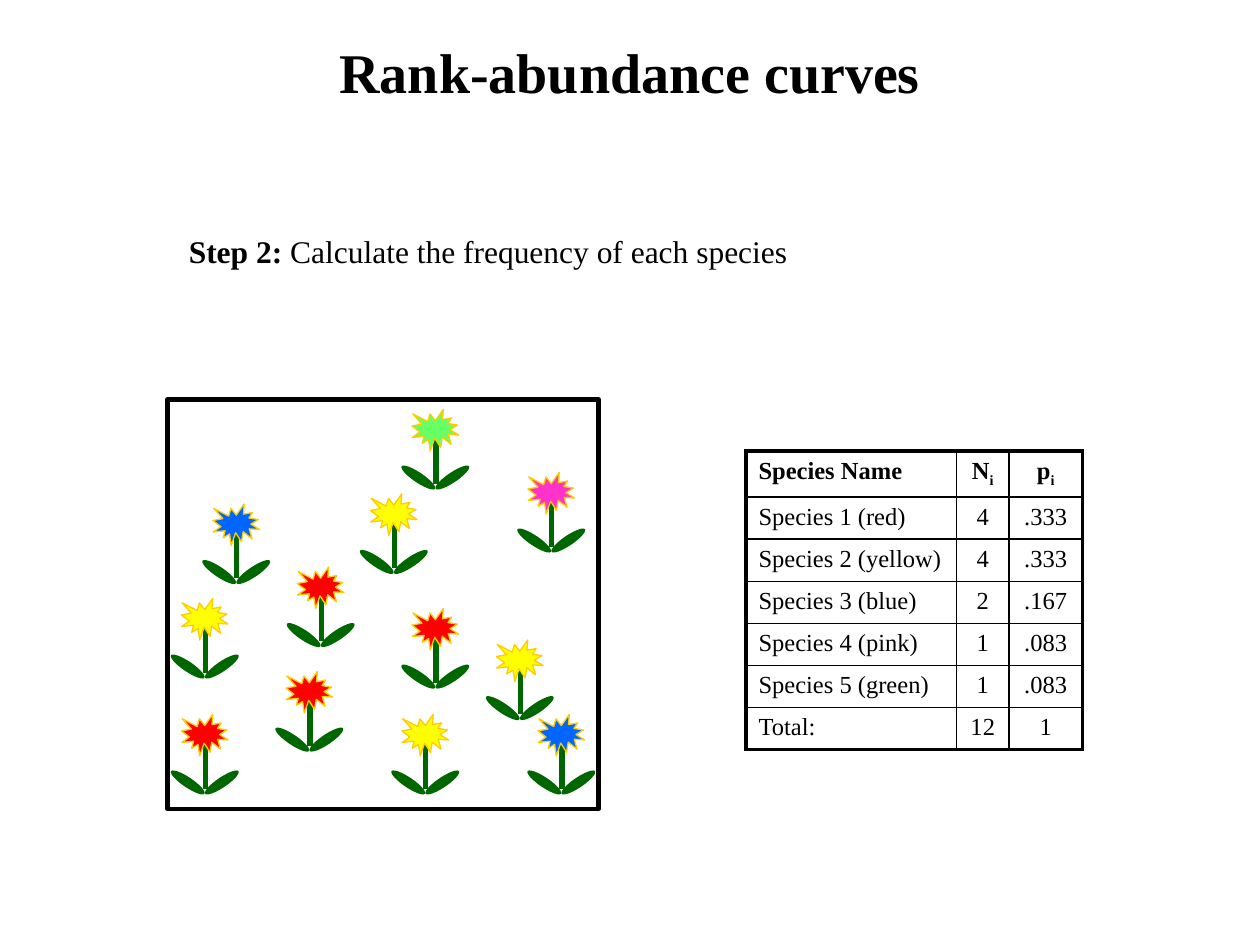
from lxml.etree import SubElement
from pptx import Presentation
from pptx.dml.color import RGBColor
from pptx.enum.shapes import MSO_CONNECTOR, MSO_SHAPE
from pptx.enum.text import MSO_AUTO_SIZE, PP_ALIGN
from pptx.oxml.ns import qn
from pptx.util import Inches, Pt

FONT = "Times New Roman"
BLACK, LEAF_GREEN, PETAL_EDGE = "000000", "006600", "FFCC00"
RED, YELLOW, BLUE, PINK, LIME = "FF0000", "FFFF00", "0066FF", "FF33CC", "66FF66"

FLOWERS = [
    (0.36, 0.83, BLUE), (0.94, 2.16, RED), (1.61, 0.75, YELLOW),
    (1.86, 2.5, YELLOW), (2.61, 1.91, YELLOW), (2.94, 2.5, BLUE),
    (1.94, 0.08, LIME), (0.11, 2.5, RED), (1.94, 1.66, RED),
    (0.11, 1.58, YELLOW), (2.86, 0.58, PINK), (1.03, 1.33, RED),
]
SPECIES_ROWS = [
    ("Species Name", "N_i", "p_i"),
    ("Species 1 (red)", "4", ".333"),
    ("Species 2 (yellow)", "4", ".333"),
    ("Species 3 (blue)", "2", ".167"),
    ("Species 4 (pink)", "1", ".083"),
    ("Species 5 (green)", "1", ".083"),
    ("Total:", "12", "1"),
]


def color(hex_code):
    """Turn a hex string into a colour."""
    return RGBColor.from_string(hex_code)


def style_font(font, size, bold=None):
    """Set the slide's typeface in black at the given size."""
    font.name, font.size, font.bold = FONT, Pt(size), bold
    font.color.rgb = color(BLACK)


def add_text(slide, left, top, width, height, size, parts, align, wrap):
    """Place one line of text made of (words, bold) parts."""
    box = slide.shapes.add_textbox(Inches(left), Inches(top), Inches(width), Inches(height))
    box.text_frame.word_wrap = wrap
    box.text_frame.auto_size = MSO_AUTO_SIZE.SHAPE_TO_FIT_TEXT
    paragraph = box.text_frame.paragraphs[0]
    paragraph.alignment = align
    style_font(paragraph.font, size)
    for words, bold in parts:
        run = paragraph.add_run()
        run.text = words
        run.font.bold = bold


def add_plain_shape(shapes, preset, left, top, width, height, fill=None, edge=None, weight=1):
    """Add a shadowless preset shape with optional fill and outline."""
    shape = shapes.add_shape(preset, Inches(left), Inches(top), Inches(width), Inches(height))
    shape.shadow.inherit = False
    if fill:
        shape.fill.solid()
        shape.fill.fore_color.rgb = color(fill)
    else:
        shape.fill.background()
    if edge:
        shape.line.color.rgb = color(edge)
        shape.line.width = Pt(weight)
    else:
        shape.line.fill.background()
    return shape


def add_flower(slide, left, top, petal_color):
    """Draw a grouped flower whose bloom starts at left, top."""
    parts = slide.shapes.add_group_shape().shapes
    for offset, angle in ((0.01, 304), (0.28, 56)):
        leaf = add_plain_shape(parts, MSO_SHAPE.OVAL, left + offset, top + 0.38, 0.08, 0.32, LEAF_GREEN)
        leaf.rotation = angle
    stem_x = Inches(left + 0.19)
    stem = parts.add_connector(MSO_CONNECTOR.STRAIGHT, stem_x, Inches(top + 0.21), stem_x, Inches(top + 0.59))
    stem.line.color.rgb = color(LEAF_GREEN)
    stem.line.width = Pt(3)
    SubElement(stem._element.spPr, qn("a:effectLst"))
    add_plain_shape(parts, MSO_SHAPE.EXPLOSION1, left, top, 0.37, 0.33, petal_color, PETAL_EDGE, 0.75)


def add_plot(slide, left, top, width, height):
    """Draw the framed sampling plot with its flowers."""
    add_plain_shape(slide.shapes, MSO_SHAPE.RECTANGLE, left, top, width, height, edge=BLACK, weight=2.5)
    for dx, dy, petal_color in FLOWERS:
        add_flower(slide, left + dx, top + dy, petal_color)


def set_borders(cell, weights):
    """Draw black borders with a point weight for each side."""
    properties = cell._tc.get_or_add_tcPr()
    for side, weight in weights.items():
        border = SubElement(properties, qn(f"a:ln{side}"), w=str(Pt(weight)))
        SubElement(SubElement(border, qn("a:solidFill")), qn("a:srgbClr"), val=BLACK)


def fill_cell(cell, label, bold, align):
    """Write a label, lowering whatever follows an underscore."""
    paragraph = cell.text_frame.paragraphs[0]
    paragraph.alignment = align
    spacing = SubElement(paragraph._p.get_or_add_pPr(), qn("a:spcBef"))
    SubElement(spacing, qn("a:spcPct"), val="20000")
    style_font(paragraph.font, 14, bold)
    base, _, subscript = label.partition("_")
    paragraph.add_run().text = base
    if subscript:
        lowered = paragraph.add_run()
        lowered.text = subscript
        lowered.font._element.set("baseline", "-25000")


def add_species_table(slide, left, top, width, height):
    """Build the table of counts and frequencies."""
    last_row, last_column = len(SPECIES_ROWS) - 1, len(SPECIES_ROWS[0]) - 1
    table = slide.shapes.add_table(
        last_row + 1, last_column + 1, Inches(left), Inches(top), Inches(width), Inches(height)
    ).table
    table.first_row = table.horz_banding = False
    for column, column_width in zip(table.columns, (1.67, 0.42, 0.58)):
        column.width = Inches(column_width)
    for r, labels in enumerate(SPECIES_ROWS):
        table.rows[r].height = Inches(0.33 if r else 0.27)
        for c, label in enumerate(labels):
            cell = table.cell(r, c)
            fill_cell(cell, label, r == 0, PP_ALIGN.CENTER if c else PP_ALIGN.LEFT)
            outer = {"L": c == 0, "R": c == last_column, "T": r == 0, "B": r == last_row}
            set_borders(cell, {side: 2.25 if edge else 1 for side, edge in outer.items()})
            cell.fill.background()


def main():
    """Build and save the slide."""
    deck = Presentation()
    deck.slide_width, deck.slide_height = Inches(10), Inches(7.5)
    slide = deck.slides.add_slide(deck.slide_layouts[6])
    add_text(slide, 0, 0.25, 10, 0.63, 32, [("Rank-abundance curves", True)], PP_ALIGN.CENTER, True)
    add_species_table(slide, 5.92, 3.58, 2.67, 2.25)
    step = [("Step 2: ", True), ("Calculate the frequency of each species", False)]
    add_text(slide, 1.4, 1.79, 4.96, 0.4, 18, step, PP_ALIGN.LEFT, False)
    add_plot(slide, 1.33, 3.17, 3.42, 3.25)
    deck.save("out.pptx")


if __name__ == "__main__":
    main()
